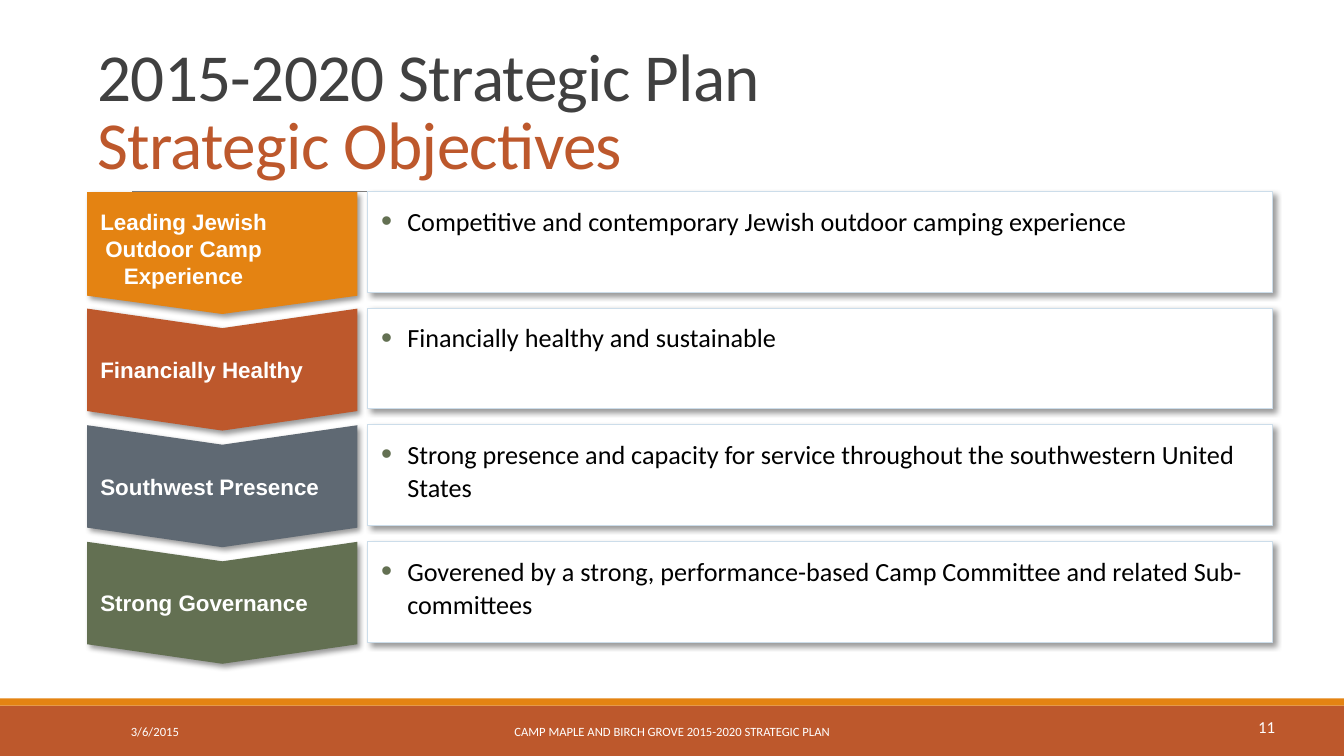
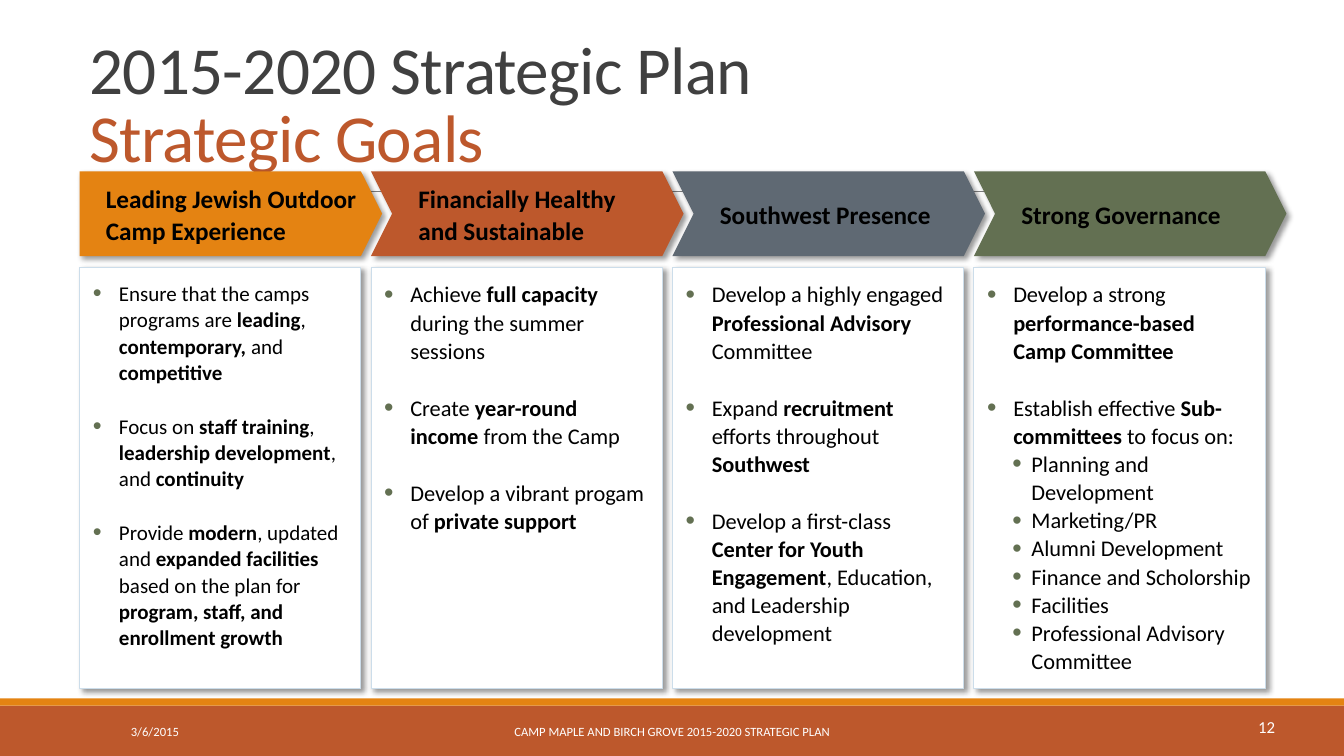
from lxml.etree import SubElement
from pptx import Presentation
from pptx.dml.color import RGBColor as RGB
from pptx.enum.shapes import MSO_CONNECTOR as Link, MSO_SHAPE as Kind
from pptx.enum.text import MSO_ANCHOR as Anchor, PP_ALIGN as Align
from pptx.oxml import parse_xml
from pptx.oxml.ns import nsdecls, qn
from pptx.util import Inches, Pt

HUES = {
    "orange": "E48312", "rust": "BD582C", "slate": "5F6973", "green": "637052",
    "dark": "404040", "gray": "808080", "pale": "CCDDEA",
    "white": "FFFFFF", "black": "000000",
}
STEPS = ["orange", "rust", "slate", "green"]
SHADOW = (
    f'<a:effectLst {nsdecls("a")}><a:outerShdw blurRad="50800" dist="38100" '
    'dir="2700000" algn="tl" rotWithShape="0"><a:srgbClr val="000000">'
    '<a:alpha val="40000"/></a:srgbClr></a:outerShdw></a:effectLst>'
)


def draw(slide, kind, box, fill, edge=None, lift=True, pads=None):
    """Add a filled shape; lift gives it a shadow, pads are left, top, right, bottom."""
    shape = slide.shapes.add_shape(kind, *map(Inches, box))
    shape.shadow.inherit = False
    shape.fill.solid()
    shape.fill.fore_color.rgb = RGB.from_string(HUES[fill])
    if edge:
        shape.line.color.rgb = RGB.from_string(HUES[edge])
        shape.line.width = Pt(0.75)
    else:
        shape.line.fill.background()
    if lift:
        props = shape.element.spPr
        props.remove(props.find(qn("a:effectLst")))
        props.append(parse_xml(SHADOW))
    if pads:
        frame = shape.text_frame
        frame.word_wrap = True
        (frame.margin_left, frame.margin_top,
         frame.margin_right, frame.margin_bottom) = map(Inches, pads)
    return shape


def write(para, text, size, hue, bold=False, face="Calibri", align=Align.LEFT,
          space=None, level=None):
    """Fill a paragraph; *stars* mark bold, a level makes it a bullet."""
    para.alignment = align
    if space:
        para.line_spacing = space
    if level is not None:
        para.level = level
        left, hang = [(0.26, 0.26), (0.44, 0.19)][level]
        props = para._p.get_or_add_pPr()
        props.set("marL", str(Inches(left)))
        props.set("indent", str(-Inches(hang)))
        SubElement(SubElement(props, qn("a:buClr")), qn("a:srgbClr"), val=HUES["green"])
        SubElement(props, qn("a:buSzPct"), val="120000")
        SubElement(props, qn("a:buFont"), typeface="Arial")
        SubElement(props, qn("a:buChar"), char="•")
    font = para.font
    font.name, font.size, font.bold = face, Pt(size), bold
    font.color.rgb = RGB.from_string(HUES[hue])
    for spot, part in enumerate(text.split("*")):
        if part:
            run = para.add_run()
            run.text = part
            if spot % 2:
                run.font.bold = True


deck = Presentation()
deck.slide_width, deck.slide_height = Inches(13.33), Inches(7.5)

# Bands, rule, title and footer of every slide
heads = [("Strategic Objectives", 0.87, 0.28, "11"), ("Strategic Goals", 0.79, 0.21, "12")]
for head, left, top, number in heads:
    slide = deck.slides.add_slide(deck.slide_layouts[6])
    draw(slide, Kind.RECTANGLE, (0, 7, 13.33, 0.5), "rust", lift=False)
    draw(slide, Kind.RECTANGLE, (0, 6.93, 13.33, 0.07), "orange", lift=False)
    rule = slide.shapes.add_connector(
        Link.STRAIGHT, Inches(1.31), Inches(1.9), Inches(12.21), Inches(1.9))
    rule.line.color.rgb = RGB.from_string(HUES["gray"])
    rule.line.width = Pt(0.5)
    SubElement(rule.element.spPr, qn("a:effectLst"))

    frame = slide.shapes.add_textbox(*map(Inches, (left, top, 11, 1.59))).text_frame
    frame.word_wrap = True
    frame.vertical_anchor = Anchor.BOTTOM
    title = frame.paragraphs[0]
    write(title, "2015-2020 Strategic Plan", 48, "dark", space=0.85)
    title.add_line_break()
    run = title.add_run()
    run.text = head
    run.font.color.rgb = RGB.from_string(HUES["rust"])
    for run in title.runs:
        run._r.get_or_add_rPr().set("spc", "-50")

    for text, box, size, align, wrap in [
        ("3/6/2015", (1.2, 7.06, 2.7, 0.4), 9, Align.LEFT, True),
        ("CAMP MAPLE AND BIRCH GROVE 2015-2020 STRATEGIC PLAN",
         (4.03, 7.06, 5.27, 0.4), 9, Align.CENTER, True),
        (number, (12.38, 7.06, 0.37, 0.3), 12, Align.LEFT, False),
    ]:
        frame = slide.shapes.add_textbox(*map(Inches, box)).text_frame
        frame.word_wrap = wrap
        frame.vertical_anchor = Anchor.MIDDLE if wrap else Anchor.TOP
        write(frame.paragraphs[0], text, size, "white", align=align)

plan, goals = deck.slides

# Objectives: a downward arrow and a text box in each row
rows = [
    ("Leading Jewish Outdoor Camp Experience",
     "Competitive and contemporary Jewish outdoor camping experience"),
    ("Financially Healthy", "Financially healthy and sustainable"),
    ("Southwest Presence",
     "Strong presence and capacity for service throughout the southwestern United States"),
    ("Strong Governance",
     "Goverened by a strong, performance-based Camp Committee and related Sub-committees"),
]
pitch = 3.47 / 3
for i, (label, text) in enumerate(rows):
    arrow = draw(plan, Kind.CHEVRON if i else Kind.PENTAGON,
                 (1.6, 1.17 + i * pitch, 1.21, 2.68), STEPS[i], pads=[0.13] * 4)
    arrow.rotation = 90
    arrow.adjustments[0] = 0.16 if i else 0.15
    arrow.text_frame.vertical_anchor = Anchor.MIDDLE
    body = arrow.element.txBody.bodyPr
    body.set("vert", "eaVert")
    body.set("rot", "10800000")
    write(arrow.text_frame.paragraphs[0], label, 16, "white", True, "Arial", Align.CENTER)

    card = draw(plan, Kind.RECTANGLE, (3.65, 1.9 + i * pitch, 8.97, 1), "white", "pale",
                pads=(0.13, 0.12, 0.13, 0.12))
    card.text_frame.vertical_anchor = Anchor.TOP
    write(card.text_frame.paragraphs[0], text, 18.7, "black", space=1.05, level=0)

# Goals: an arrow above a list in each column; ">" marks a sub-item
lists = [
    ("Leading Jewish Outdoor Camp Experience", 15, [
        "Ensure that the camps programs are *leading*, *contemporary,* and *competitive*",
        "Focus on *staff training*, *leadership development*, and *continuity*",
        "Provide *modern*, updated and *expanded facilities *based on the plan for "
        "*program, staff, and enrollment growth*",
    ]),
    ("Financially Healthy and Sustainable", 16, [
        "Achieve *full capacity *during the summer sessions",
        "Create *year-round income *from the Camp",
        "Develop a vibrant progam of *private support*",
    ]),
    ("Southwest Presence", 16, [
        "Develop a highly engaged *Professional Advisory *Committee",
        "Expand *recruitment* efforts throughout *Southwest*",
        "Develop a first-class *Center for Youth Engagement*, Education, "
        "and Leadership development",
    ]),
    ("Strong Governance", 16, [
        "Develop a strong *performance-based Camp Committee*",
        "Establish effective *Sub-committees *to focus on:",
        ">Planning and Development",
        ">Marketing/PR",
        ">Alumni Development",
        ">Finance and Scholorship",
        ">Facilities",
        ">Professional Advisory Committee",
    ]),
]
for i, (label, size, items) in enumerate(lists):
    trim = 0 if i else 0.1
    left = 0.69 + 2.99 * i + trim
    arrow = draw(goals, Kind.CHEVRON if i else Kind.PENTAGON,
                 (left, 1.7, 3.1 - trim, 0.84), STEPS[i], pads=(0.26, 0.07, 0.05, 0.07))
    arrow.adjustments[0] = 0.25
    arrow.text_frame.vertical_anchor = Anchor.MIDDLE
    write(arrow.text_frame.paragraphs[0], label, 18, "black", True, space=1.05)

    card = draw(goals, Kind.RECTANGLE, (left, 2.65, 2.89 - trim, 4.18), "white", "pale",
                pads=(0.13, 0.12, 0.13, 0.12))
    frame = card.text_frame
    frame.vertical_anchor = Anchor.TOP
    for j, item in enumerate(items):
        para = frame.add_paragraph() if j else frame.paragraphs[0]
        level = int(item.startswith(">"))
        if j and not level:
            para.space_before = Pt(size * 1.28)
        write(para, item.lstrip(">"), size, "black", space=1.05, level=level)

deck.save("out.pptx")
